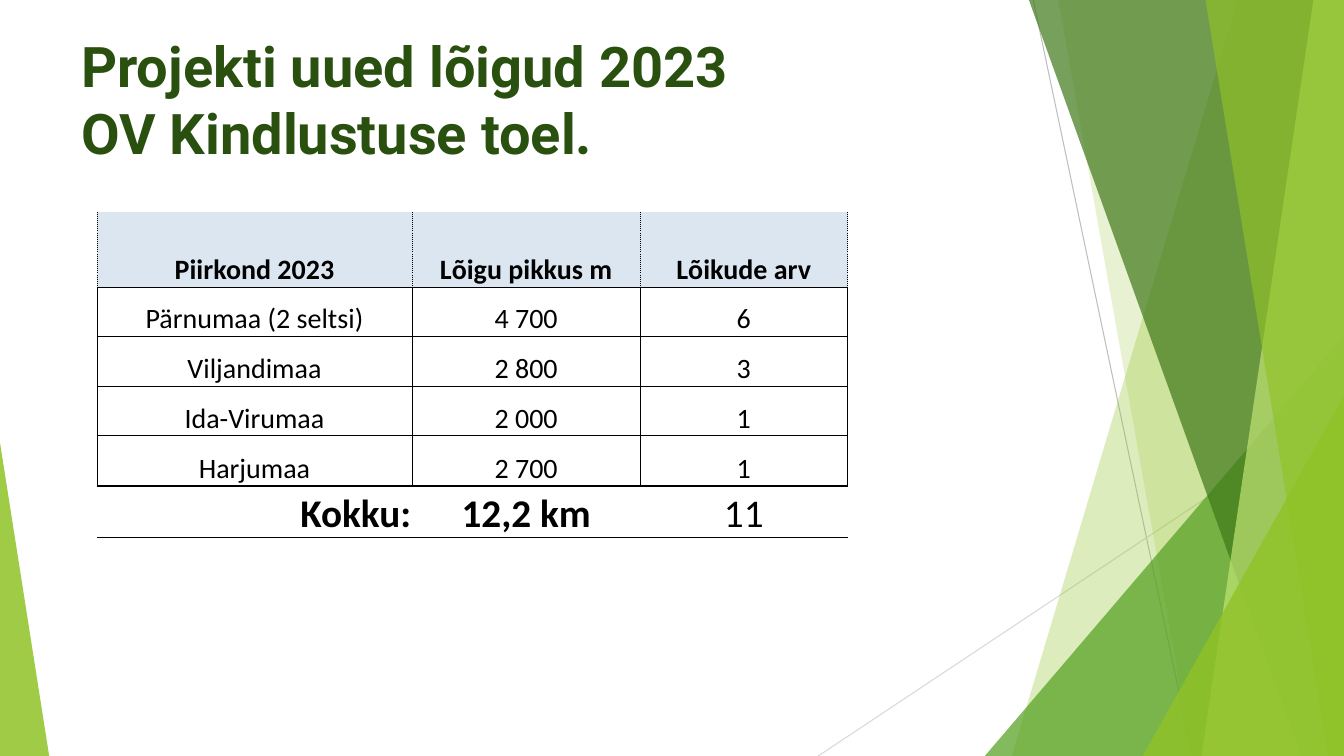
"""Slide with the new 2023 project sections, their table and a green facet frame."""
import lxml.etree
import pptx
import pptx.dml.color
import pptx.enum.shapes
import pptx.enum.text
import pptx.oxml.ns
import pptx.util

Cm, Pt = pptx.util.Cm, pptx.util.Pt
qn = pptx.oxml.ns.qn
Align = pptx.enum.text.PP_ALIGN
Anchor = pptx.enum.text.MSO_ANCHOR
WIDE, HIGH = 33.87, 19.05


def color(code):
    """Turn a hex string into a colour."""
    return pptx.dml.color.RGBColor.from_string(code)


def paint(shape, code, alpha):
    """Give a shape a see-through fill, no line and no shadow."""
    shape.shadow.inherit = False
    shape.line.fill.background()
    shape.fill.solid()
    shape.fill.fore_color.rgb = color(code)
    tone = shape.fill._xPr.find(qn("a:solidFill"))[0]
    lxml.etree.SubElement(tone, qn("a:alpha"), val=str(alpha * 1000))


deck = pptx.Presentation()
deck.slide_width, deck.slide_height = Cm(WIDE), Cm(HIGH)
slide = deck.slides.add_slide(deck.slide_layouts[6])
shapes = slide.shapes

rays = [
    (26.04, 0, 30.05, HIGH, "BFBFBF"),
    (WIDE, 10.24, 20.62, HIGH, "D9D9D9"),
]
for *ends, code in rays:
    ray = shapes.add_connector(
        pptx.enum.shapes.MSO_CONNECTOR.STRAIGHT, *[Cm(end) for end in ends])
    ray.line.color.rgb = color(code)
    ray.line.width = Pt(0.75)
    lxml.etree.SubElement(ray._element.spPr, qn("a:effectLst"))

facets = [
    ("band", 31.19, 25.5, "90C226", 30),
    ("band", 26.67, 30.05, "90C226", 20),
    ("peak", 24.82, 8.46, "54A021", 72),
    ("band", 25.93, 32.79, "3F7819", 70),
    ("band", 33.1, 30.28, "C0E474", 70),
    ("band", 30.38, 33.48, "90C226", 65),
    ("peak", 28.8, 9.98, "90C226", 80),
    ("side", 1.24, 11.15, "90C226", 85),
]
for kind, first, second, code, alpha in facets:
    if kind == "band":
        form = shapes.build_freeform(Cm(first), 0)
        form.add_line_segments([
            (Cm(WIDE), 0), (Cm(WIDE), Cm(HIGH)), (Cm(second), Cm(HIGH))])
        facet = form.convert_to_shape()
    else:
        left, right = (first, WIDE) if kind == "peak" else (0, first)
        facet = shapes.add_shape(
            pptx.enum.shapes.MSO_SHAPE.ISOSCELES_TRIANGLE,
            Cm(left), Cm(second), Cm(right - left), Cm(HIGH - second))
        facet.adjustments[0] = 1 if kind == "peak" else 0
    paint(facet, code, alpha)

title = shapes.add_textbox(Cm(1.8), Cm(0.64), Cm(21.95), Cm(3.71))
frame = title.text_frame
frame.word_wrap = True
frame.vertical_anchor = Anchor.MIDDLE
frame.text = "Projekti uued lõigud 2023\nOV Kindlustuse toel."
for para in frame.paragraphs:
    font = para.runs[0].font
    font.name, font.size, font.bold = "Roboto", Pt(40), True
    font.color.rgb = color("2A5010")

data = [
    ("Piirkond 2023", "Lõigu pikkus m", "Lõikude arv"),
    ("Pärnumaa (2 seltsi)", "4 700", "6"),
    ("Viljandimaa", "2 800", "3"),
    ("Ida-Virumaa", "2 000", "1"),
    ("Harjumaa", "2 700", "1"),
    ("Kokku:", "12,2 km", "11"),
]
widths = [7.95, 5.74, 5.23]
heights = [1.9, 1.25, 1.25, 1.25, 1.27, 1.3]
rules = [0, 0.5, 0.5, 0.5, 0.5, 2, 1]
last = len(data) - 1

table = shapes.add_table(
    len(data), len(widths), Cm(2.44), Cm(5.33),
    Cm(sum(widths)), Cm(sum(heights))).table
table.first_row = table.horz_banding = False
for col, width in zip(table.columns, widths):
    col.width = Cm(width)

for i, words in enumerate(data):
    table.rows[i].height = Cm(heights[i])
    side = 0 if i == last else 0.5
    edges = {"L": side, "R": side, "T": rules[i], "B": rules[i + 1]}
    for j, word in enumerate(words):
        cell = table.cell(i, j)
        cell.vertical_anchor = Anchor.BOTTOM
        cell.margin_left = cell.margin_right = cell.margin_top = Cm(0.03)
        cell.margin_bottom = 0
        cell.text = word
        para = cell.text_frame.paragraphs[0]
        para.alignment = Align.RIGHT if i == last and j == 0 else Align.CENTER
        font = para.runs[0].font
        font.name, font.size = "Calibri", Pt(28 if i == last else 20)
        font.bold = i == 0 or (i == last and j < 2)
        font.color.rgb = color("000000")
        if i == 0:
            cell.fill.solid()
            cell.fill.fore_color.rgb = color("DCE6F1")
        else:
            cell.fill.background()
        props = cell._tc.get_or_add_tcPr()
        for spot, (edge, size) in enumerate(edges.items()):
            line = lxml.etree.Element(qn("a:ln" + edge), w=str(Pt(size)))
            props.insert(spot, line)
            if size:
                ink = lxml.etree.SubElement(line, qn("a:solidFill"))
                lxml.etree.SubElement(ink, qn("a:srgbClr"), val="000000")
                dash = "sysDot" if i == 0 and edge in "LR" else "solid"
                lxml.etree.SubElement(line, qn("a:prstDash"), val=dash)
            else:
                lxml.etree.SubElement(line, qn("a:noFill"))

deck.save("out.pptx")
